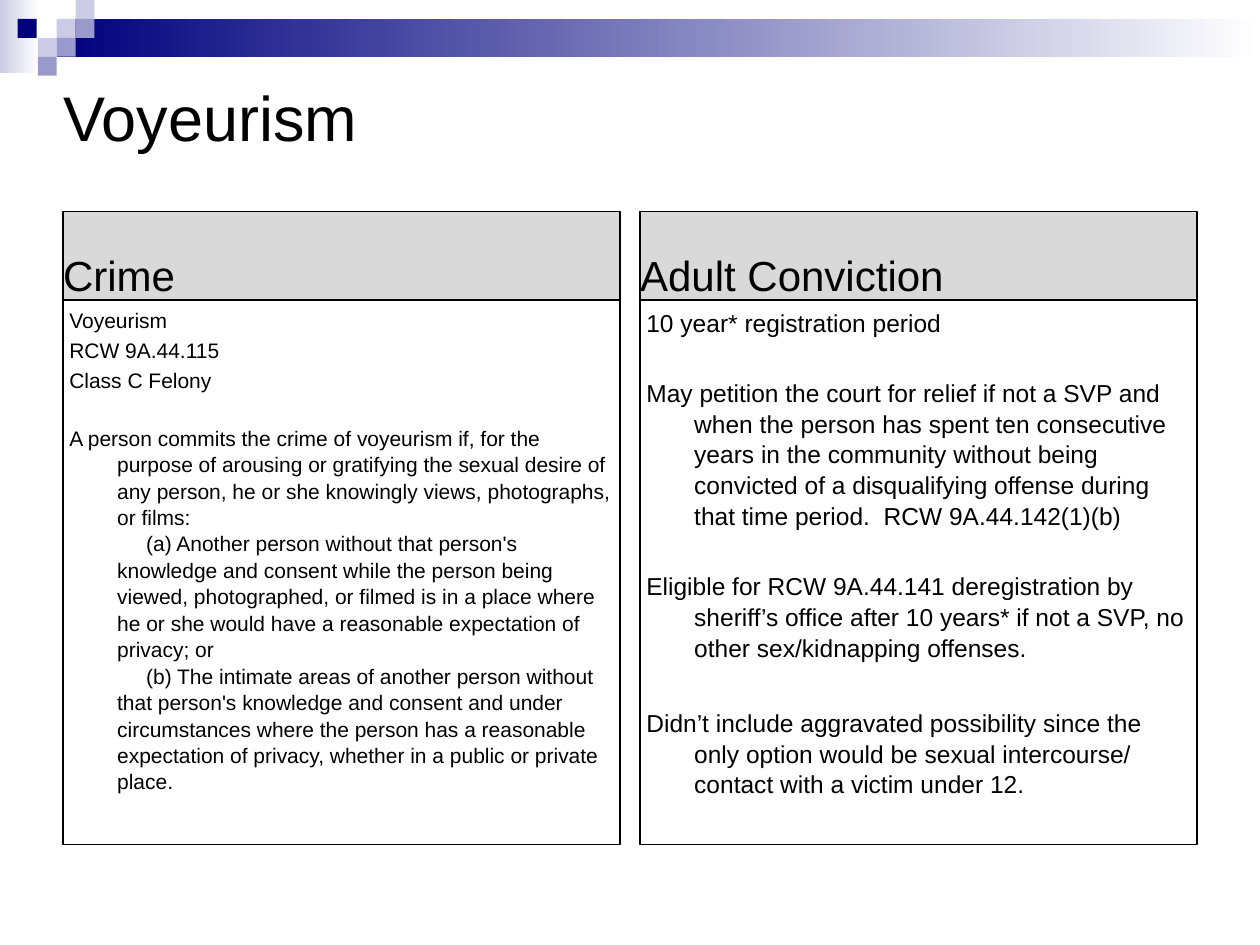
from pptx import Presentation
from pptx.dml.color import RGBColor
from pptx.enum.shapes import MSO_SHAPE
from pptx.enum.text import MSO_ANCHOR, PP_ALIGN
from pptx.util import Inches, Pt

RECT = MSO_SHAPE.RECTANGLE
TOP, MIDDLE, BOTTOM = MSO_ANCHOR.TOP, MSO_ANCHOR.MIDDLE, MSO_ANCHOR.BOTTOM
LEFT = PP_ALIGN.LEFT
NAVY, LILAC, VIOLET = "00007D", "CCCCE6", "9999CC"
BLACK, WHITE, GREY = "000000", "FFFFFF", "D9D9D9"


def rgb(value):
    return RGBColor.from_string(value)


def write(shape, paragraphs, size, anchor, margin=0):
    """Each paragraph is (text, space before, left margin, first-line indent)."""
    tf = shape.text_frame
    tf.word_wrap = True
    tf.vertical_anchor = anchor
    tf.margin_left = tf.margin_right = Inches(margin)
    tf.margin_top = tf.margin_bottom = Inches(margin)
    for i, (text, before, left, indent) in enumerate(paragraphs):
        p = tf.paragraphs[0] if i == 0 else tf.add_paragraph()
        p.text = text
        p.alignment = LEFT
        p.space_before = Pt(before)
        p.font.name, p.font.size = "Arial", Pt(size)
        p.font.color.rgb = rgb(BLACK)
        if left:
            p.line_spacing = 1.05
            pPr = p._p.get_or_add_pPr()
            pPr.set("marL", str(Inches(left)))
            pPr.set("indent", str(Inches(indent)))


prs = Presentation()
prs.slide_width, prs.slide_height = Inches(10), Inches(7.5)
s = prs.slides.add_slide(prs.slide_layouts[5])

# Gradient bands along the top
for x, y, w, h, start in [(0, 0, 0.31, 0.58, LILAC), (0.45, 0.15, 9.55, 0.3, NAVY)]:
    sp = s.shapes.add_shape(RECT, Inches(x), Inches(y), Inches(w), Inches(h))
    sp.shadow.inherit = False
    sp.line.fill.background()
    sp.fill.gradient()
    sp.fill.gradient_angle = 0
    for stop, color, position in zip(sp.fill.gradient_stops, (start, WHITE), (0, 1)):
        stop.color.rgb = rgb(color)
        stop.position = position

# Mosaic of small squares
for x, y, color in [(0.45, 0.15, LILAC), (0.6, 0, LILAC), (0.6, 0.15, VIOLET),
                    (0.3, 0.3, LILAC), (0.14, 0.15, NAVY), (0.45, 0.3, VIOLET),
                    (0.3, 0.45, VIOLET)]:
    sp = s.shapes.add_shape(RECT, Inches(x), Inches(y), Inches(0.15), Inches(0.15))
    sp.shadow.inherit = False
    sp.line.fill.background()
    sp.fill.solid()
    sp.fill.fore_color.rgb = rgb(color)

# Title
title = s.shapes.title
title.left, title.top = Inches(0.5), Inches(0.3)
title.width, title.height = Inches(9), Inches(1.25)
write(title, [("Voyeurism", 0, 0, 0)], 36, MIDDLE)

# Two columns: heading, text size, paragraphs
HANG = (0.38, -0.38)
CLAUSE = (0.38, 0.23)
columns = [
    ("Crime", 12, [
        ("Voyeurism", 2, *HANG),
        ("RCW 9A.44.115", 2, *HANG),
        ("Class C Felony", 2, *HANG),
        ("A person commits the crime of voyeurism if, for the purpose of arousing or "
         "gratifying the sexual desire of any person, he or she knowingly views, "
         "photographs, or films:", 18, *HANG),
        ("(a) Another person without that person's knowledge and consent while the "
         "person being viewed, photographed, or filmed is in a place where he or she "
         "would have a reasonable expectation of privacy; or", 0, *CLAUSE),
        ("(b) The intimate areas of another person without that person's knowledge and "
         "consent and under circumstances where the person has a reasonable expectation "
         "of privacy, whether in a public or private place.", 0, *CLAUSE),
    ]),
    ("Adult Conviction", 14, [
        ("10 year* registration period", 3, *HANG),
        ("May petition the court for relief if not a SVP and when the person has spent "
         "ten consecutive years in the community without being convicted of a "
         "disqualifying offense during that time period.  RCW 9A.44.142(1)(b)", 22.5, *HANG),
        ("Eligible for RCW 9A.44.141 deregistration by sheriff’s office after 10 years* "
         "if not a SVP, no other sex/kidnapping offenses.", 22.5, *HANG),
        ("Didn’t include aggravated possibility since the only option would be sexual "
         "intercourse/ contact with a victim under 12.", 25, *HANG),
    ]),
]
for i, (heading, size, paragraphs) in enumerate(columns):
    x = Inches(0.5 + i * 4.58)
    header = s.shapes.add_shape(RECT, x, Inches(1.68), Inches(4.42), Inches(0.7))
    header.fill.solid()
    header.fill.fore_color.rgb = rgb(GREY)
    write(header, [(heading, 5, 0, 0)], 24, BOTTOM)

    body = s.shapes.add_shape(RECT, x, Inches(2.38), Inches(4.42), Inches(4.32))
    body.fill.background()
    write(body, paragraphs, size, TOP, 0.05)

    for sp in (header, body):
        sp.shadow.inherit = False
        sp.line.color.rgb = rgb(BLACK)
        sp.line.width = Pt(0.75)

prs.save("out.pptx")
